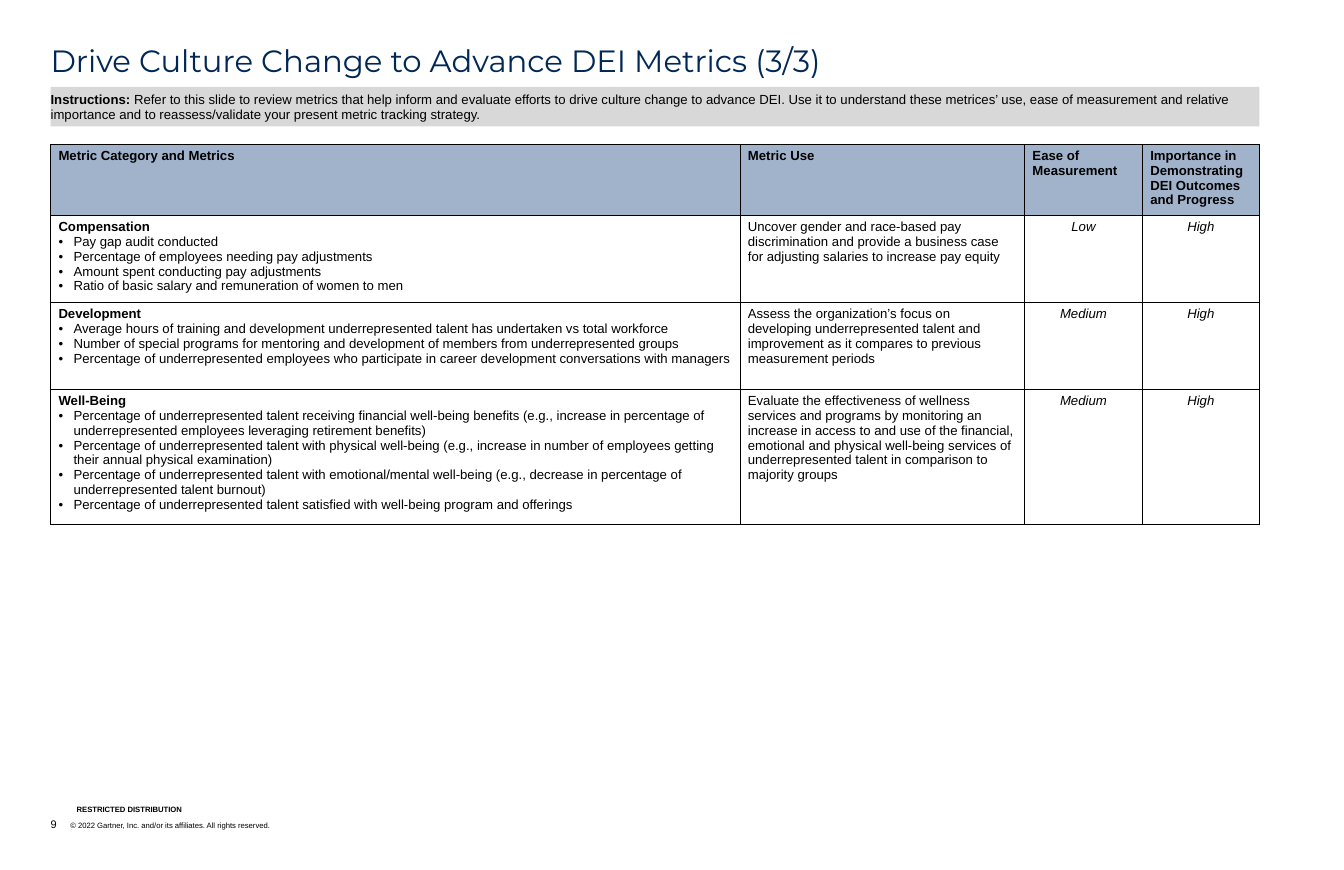
from dataclasses import dataclass

from lxml import etree
from pptx import Presentation
from pptx import util as u
from pptx.dml.color import RGBColor
from pptx.enum import shapes, text
from pptx.oxml import ns

COLORS = {
    "title": "002856",
    "ink": "000000",
    "header": "A1B3CA",
    "banner": "D8D8D8",
}
LEFT, CONTENT_WIDTH = 0.64, 15.29
COLUMN_WIDTHS = (8.72, 3.6, 1.49, 1.48)
ROW_HEIGHTS = (0.9, 1.1, 1.1, 1.7)
BULLET_INDENT = 0.19

HEADINGS = (
    "Metric Category and Metrics",
    "Metric Use",
    "Ease of Measurement",
    "Importance in Demonstrating DEI Outcomes and Progress",
)


@dataclass(frozen=True)
class MetricCategory:
    name: str
    metrics: tuple[str, ...]
    use: str
    ease: str
    importance: str


CATEGORIES = (
    MetricCategory(
        "Compensation",
        (
            "Pay gap audit conducted",
            "Percentage of employees needing pay adjustments",
            "Amount spent conducting pay adjustments",
            "Ratio of basic salary and remuneration of women to men",
        ),
        "Uncover gender and race-based pay discrimination and provide a business case "
        "for adjusting salaries to increase pay equity",
        "Low",
        "High",
    ),
    MetricCategory(
        "Development",
        (
            "Average hours of training and development underrepresented talent has "
            "undertaken vs total workforce",
            "Number of special programs for mentoring and development of members from "
            "underrepresented groups",
            "Percentage of underrepresented employees who participate in career "
            "development conversations with managers",
        ),
        "Assess the organization’s focus on developing underrepresented talent and "
        "improvement as it compares to previous measurement periods",
        "Medium",
        "High",
    ),
    MetricCategory(
        "Well-Being",
        (
            "Percentage of underrepresented talent receiving financial well-being benefits "
            "(e.g., increase in percentage of underrepresented employees leveraging "
            "retirement benefits)",
            "Percentage of underrepresented talent with physical well-being (e.g., increase "
            "in number of employees getting their annual physical examination)",
            "Percentage of underrepresented talent with emotional/mental well-being (e.g., "
            "decrease in percentage of underrepresented talent burnout)",
            "Percentage of underrepresented talent satisfied with well-being program and "
            "offerings",
        ),
        "Evaluate the effectiveness of wellness services and programs by monitoring an "
        "increase in access to and use of the financial, emotional and physical "
        "well-being services of underrepresented talent in comparison to majority groups",
        "Medium",
        "High",
    ),
)


def apply_format(target, values: dict) -> None:
    for attribute, value in values.items():
        setattr(target, attribute, value)


def add_run(paragraph, wording: str, size: float = 12, color: str = "ink", **formats) -> None:
    run = paragraph.add_run()
    run.text = wording
    apply_format(run.font, {"name": "Arial", "size": u.Pt(size), **formats})
    run.font.color.rgb = RGBColor.from_string(COLORS[color])


def set_frame(frame, anchor, vertical_margin: float = 0) -> None:
    apply_format(frame, {
        "word_wrap": True,
        "auto_size": text.MSO_AUTO_SIZE.NONE,
        "vertical_anchor": anchor,
        "margin_left": 0,
        "margin_right": 0,
        "margin_top": u.Inches(vertical_margin),
        "margin_bottom": u.Inches(vertical_margin),
    })


def place(shape, left: float, top: float, width: float, height: float) -> None:
    box = zip(("left", "top", "width", "height"), (left, top, width, height))
    apply_format(shape, {side: u.Inches(length) for side, length in box})


def set_hanging_indent(paragraph, indent: float):
    properties = paragraph._p.get_or_add_pPr()
    properties.set("marL", str(u.Inches(indent)))
    properties.set("indent", str(-u.Inches(indent)))
    return properties


def add_bullet(paragraph) -> None:
    properties = set_hanging_indent(paragraph, BULLET_INDENT)
    bullet_color = etree.SubElement(properties, ns.qn("a:buClr"))
    etree.SubElement(bullet_color, ns.qn("a:srgbClr"), val=COLORS["ink"])
    etree.SubElement(properties, ns.qn("a:buFont"), typeface="Arial")
    etree.SubElement(properties, ns.qn("a:buChar"), char="•")


def add_borders(cell) -> None:
    properties = cell._tc.get_or_add_tcPr()
    for side in ("lnL", "lnR", "lnT", "lnB"):
        line = etree.SubElement(properties, ns.qn(f"a:{side}"), w=str(u.Pt(1)))
        line_fill = etree.SubElement(line, ns.qn("a:solidFill"))
        etree.SubElement(line_fill, ns.qn("a:srgbClr"), val=COLORS["ink"])


def add_title(slide) -> None:
    title = slide.shapes.title
    place(title, LEFT, 0.58, 15.72, 0.72)
    set_frame(title.text_frame, text.MSO_ANCHOR.TOP)
    heading = title.text_frame.paragraphs[0]
    apply_format(heading, {"alignment": text.PP_ALIGN.LEFT, "line_spacing": 0.9})
    add_run(heading, "Drive Culture Change to Advance DEI Metrics (3/3)", 28, "title",
            name="Montserrat")


def add_instructions(slide) -> None:
    banner = slide.shapes.add_shape(shapes.MSO_SHAPE.RECTANGLE, 0, 0, 0, 0)
    place(banner, LEFT, 1.1, CONTENT_WIDTH, 0.5)
    banner.shadow.inherit = False
    banner.fill.solid()
    banner.fill.fore_color.rgb = RGBColor.from_string(COLORS["banner"])
    banner.line.fill.background()
    set_frame(banner.text_frame, text.MSO_ANCHOR.MIDDLE, 0.05)
    instructions = banner.text_frame.paragraphs[0]
    instructions.alignment = text.PP_ALIGN.LEFT
    add_run(instructions, "Instructions: ", bold=True)
    add_run(instructions, "Refer to this slide to review metrics that help inform and evaluate "
            "efforts to drive culture change to advance DEI. Use it to understand these "
            "metrices’ use, ease of measurement and relative importance and to "
            "reassess/validate your present metric tracking strategy.")


def add_metrics_table(slide) -> None:
    table = slide.shapes.add_table(
        len(ROW_HEIGHTS), len(COLUMN_WIDTHS), u.Inches(LEFT), u.Inches(1.83),
        u.Inches(CONTENT_WIDTH), u.Inches(sum(ROW_HEIGHTS))).table
    for column, width in zip(table.columns, COLUMN_WIDTHS):
        column.width = u.Inches(width)
    for row, height in zip(table.rows, ROW_HEIGHTS):
        row.height = u.Inches(height)
    for cell in table.iter_cells():
        add_borders(cell)
        cell.fill.background()

    for cell, heading in zip(table.rows[0].cells, HEADINGS):
        cell.fill.solid()
        cell.fill.fore_color.rgb = RGBColor.from_string(COLORS["header"])
        add_run(cell.text_frame.paragraphs[0], heading, bold=True)

    for row_number, category in enumerate(CATEGORIES, start=1):
        metrics, use, *ratings = (cell.text_frame for cell in table.rows[row_number].cells)
        add_run(metrics.paragraphs[0], category.name, bold=True)
        for metric in category.metrics:
            item = metrics.add_paragraph()
            add_bullet(item)
            add_run(item, metric, bold=False)
        add_run(use.paragraphs[0], category.use, bold=False)
        for rating, level in zip(ratings, (category.ease, category.importance)):
            rating.paragraphs[0].alignment = text.PP_ALIGN.CENTER
            add_run(rating.paragraphs[0], level, bold=False, italic=True)


def add_footer_line(slide, left: float, top: float, width: float, height: float):
    footer = slide.shapes.add_textbox(0, 0, 0, 0)
    place(footer, left, top, width, height)
    set_frame(footer.text_frame, text.MSO_ANCHOR.BOTTOM)
    return footer.text_frame.paragraphs[0]


def main() -> None:
    deck = Presentation()
    apply_format(deck, {"slide_width": u.Inches(17), "slide_height": u.Inches(11)})
    slide = deck.slides.add_slide(deck.slide_layouts[5])
    distribution = add_footer_line(slide, 0.97, 10.18, 3.23, 0.11)
    distribution.line_spacing = 0.9
    add_run(distribution, "RESTRICTED DISTRIBUTION", 7, bold=True)
    copyright_line = add_footer_line(slide, LEFT, 10.33, 10.19, 0.17)
    set_hanging_indent(copyright_line, 0.25)
    add_run(copyright_line, "9", 10)
    add_run(copyright_line, "\t© 2022 Gartner, Inc. and/or its affiliates. All rights reserved.", 7)
    add_metrics_table(slide)
    add_title(slide)
    add_instructions(slide)
    deck.save("out.pptx")


if __name__ == "__main__":
    main()
